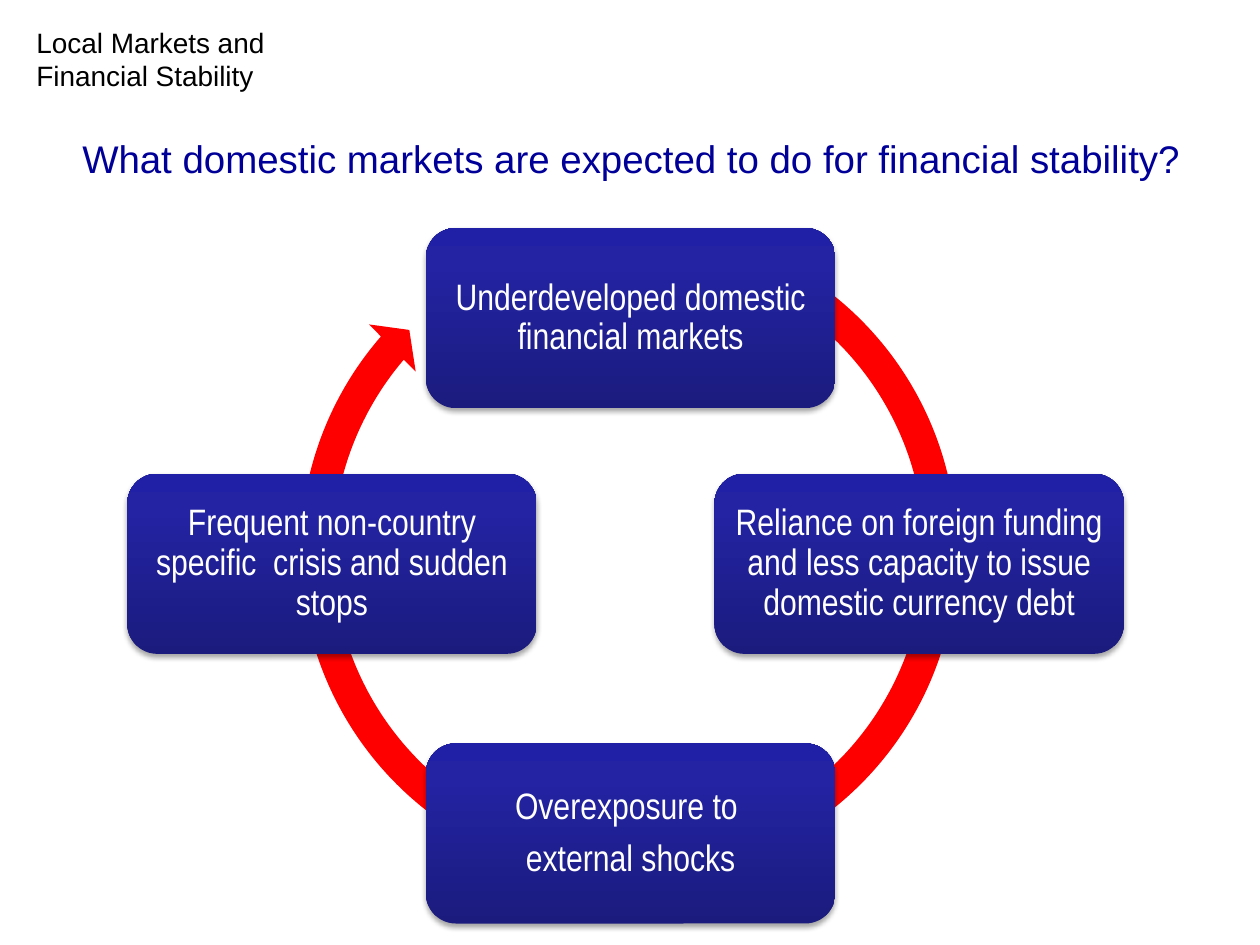
from dataclasses import dataclass
from lxml import etree
from pptx import Presentation
from pptx.dml.color import RGBColor
from pptx.enum.shapes import MSO_SHAPE
from pptx.enum.text import MSO_ANCHOR, MSO_AUTO_SIZE, PP_ALIGN
from pptx.oxml import parse_xml
from pptx.oxml.ns import nsdecls, qn
from pptx.util import Inches, Pt

ARROW = MSO_SHAPE.CIRCULAR_ARROW
ROUND = MSO_SHAPE.ROUNDED_RECTANGLE
MIDDLE = MSO_ANCHOR.MIDDLE
TOP = MSO_ANCHOR.TOP
FIXED = MSO_AUTO_SIZE.NONE
CENTER = PP_ALIGN.CENTER
LEFT = PP_ALIGN.LEFT


@dataclass(frozen=True)
class Theme:
    sans: str = "Arial"
    narrow: str = "Arial Narrow"
    title: str = "000099"
    ink: str = "000000"
    paper: str = "FFFFFF"
    ring: str = "FF0000"
    shades: tuple = ((0, "1B1B7E"), (80, "2323A3"), (100, "2020A6"))
    head_size: float = 22
    tag_size: float = 16
    step_size: float = 21


THEME = Theme()
RING = (0.047, 2.729, 132.47, 177.543, 0.048)
STEPS = (
    (2.37, 0.17, ("Underdeveloped domestic financial markets",)),
    (4.66, 2.12, ("Reliance on foreign funding and less capacity to issue domestic currency debt",)),
    (2.37, 4.26, ("Overexposure to ", "external shocks")),
    (0, 2.12, ("Frequent non-country specific  crisis and sudden stops",)),
)


def apply(item, values):
    for name, value in values.items():
        setattr(item, name, value)


def write(frame, lines, font, size, color, para, body):
    apply(frame, {"word_wrap": True, "auto_size": FIXED, **body})
    for i, line in enumerate(lines):
        item = frame.paragraphs[0] if i == 0 else frame.add_paragraph()
        apply(item, para)
        run = item.add_run()
        run.text = line
        apply(run.font, {"name": font, "size": Pt(size), "bold": False})
        run.font.color.rgb = RGBColor.from_string(color)


def shade(shape):
    stops = "".join(
        f'<a:gs pos="{pos * 1000}"><a:srgbClr val="{color}"/></a:gs>'
        for pos, color in THEME.shades
    )
    shape._element.spPr.append(parse_xml(
        f'<a:gradFill {nsdecls("a")} rotWithShape="1"><a:gsLst>{stops}</a:gsLst>'
        '<a:lin ang="16200000" scaled="0"/></a:gradFill>'
    ))


def shadow(shape):
    effect = shape._element.spPr.find(qn("a:effectLst"))
    cast = etree.SubElement(
        effect, qn("a:outerShdw"), blurRad=str(Pt(3.1)), dist=str(Pt(1.8)),
        dir="5400000", rotWithShape="0",
    )
    tone = etree.SubElement(cast, qn("a:srgbClr"), val=THEME.ink)
    etree.SubElement(tone, qn("a:alpha"), val="35000")


def add_title(slide, left, top, width, height):
    title = slide.shapes.title
    apply(title, {"left": left, "top": top, "width": width, "height": height})
    write(title.text_frame, ["What domestic markets are expected to do for financial stability?"],
          THEME.sans, THEME.head_size, THEME.title,
          {"alignment": CENTER, "line_spacing": 0.9}, {"vertical_anchor": MIDDLE})


def add_tag(slide, left, top, width, height):
    box = slide.shapes.add_textbox(left, top, width, height)
    write(box.text_frame, ["Local Markets and Financial Stability"],
          THEME.sans, THEME.tag_size, THEME.ink,
          {"alignment": LEFT}, {"vertical_anchor": TOP})


def add_ring(slide, left, top, size):
    ring = slide.shapes.add_shape(ARROW, left, top, size, size)
    for i, value in enumerate(RING):
        ring.adjustments[i] = value
    ring.fill.solid()
    ring.fill.fore_color.rgb = RGBColor.from_string(THEME.ring)
    ring.line.fill.background()
    ring.shadow.inherit = False


def add_step(slide, left, top, width, height, lines):
    step = slide.shapes.add_shape(ROUND, left, top, width, height)
    shade(step)
    step.line.fill.background()
    step.shadow.inherit = False
    shadow(step)
    pad = Inches(0.09)
    write(step.text_frame, lines, THEME.narrow, THEME.step_size, THEME.paper,
          {"alignment": CENTER, "line_spacing": 0.9, "space_after": Pt(7.35)},
          {"vertical_anchor": MIDDLE, "margin_left": pad, "margin_right": pad,
           "margin_top": pad, "margin_bottom": pad})


def add_cycle(slide, left, top):
    add_ring(slide, left + Inches(1.24), top, Inches(5.48))
    for x, y, lines in STEPS:
        add_step(slide, left + Inches(x), top + Inches(y),
                 Inches(3.25), Inches(1.43), lines)


def main():
    deck = Presentation()
    apply(deck, {"slide_width": Inches(10), "slide_height": Inches(7.5)})
    slide = deck.slides.add_slide(deck.slide_layouts[5])
    add_cycle(slide, Inches(1.01), Inches(1.64))
    add_title(slide, Inches(0.51), Inches(1.06), Inches(9), Inches(0.43))
    add_tag(slide, Inches(0.19), Inches(0.15), Inches(2.23), Inches(0.64))
    deck.save("out.pptx")


if __name__ == "__main__":
    main()
